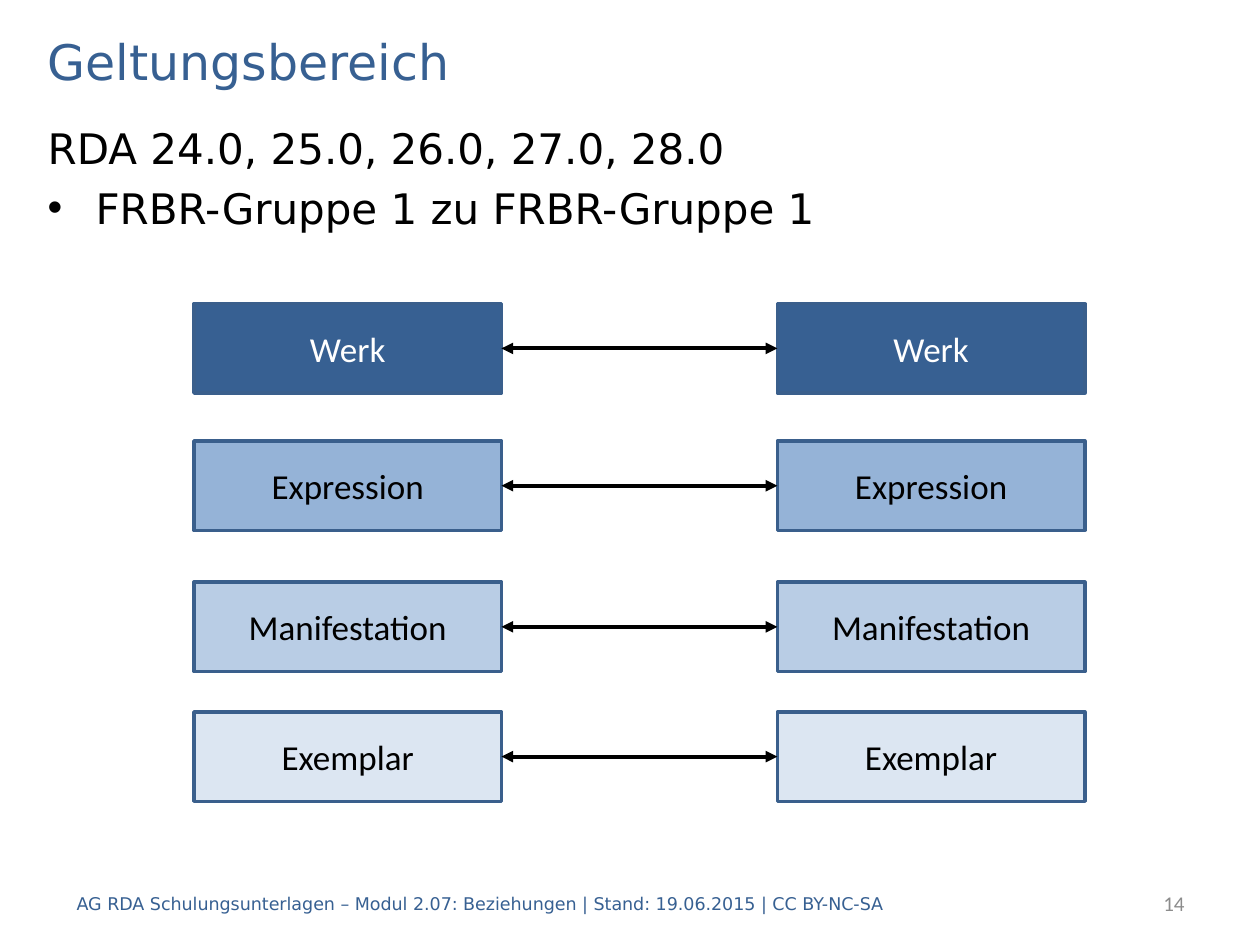
from lxml import etree
from pptx import Presentation
from pptx.dml.color import RGBColor
from pptx.enum.shapes import MSO_CONNECTOR, MSO_SHAPE
from pptx.enum.text import MSO_ANCHOR, PP_ALIGN
from pptx.oxml.ns import qn
from pptx.util import Inches, Pt

RECT, LINE = MSO_SHAPE.RECTANGLE, MSO_CONNECTOR.STRAIGHT
TOP, MIDDLE = MSO_ANCHOR.TOP, MSO_ANCHOR.MIDDLE
LEFT, CENTER, RIGHT = PP_ALIGN.LEFT, PP_ALIGN.CENTER, PP_ALIGN.RIGHT

BLUE = RGBColor(0x37, 0x60, 0x92)
EDGE = RGBColor(0x3A, 0x5F, 0x8C)
MID = RGBColor(0x95, 0xB3, 0xD7)
LIGHT = RGBColor(0xB9, 0xCD, 0xE5)
PALE = RGBColor(0xDC, 0xE6, 0xF2)
GRAY = RGBColor(0x8C, 0x8C, 0x8C)
BLACK = RGBColor(0, 0, 0)
WHITE = RGBColor(255, 255, 255)
SANS, BODY = "DejaVu Sans", "Calibri"

# Content
TITLE = "Geltungsbereich"
INTRO = ["RDA 24.0, 25.0, 26.0, 27.0, 28.0", "FRBR-Gruppe 1 zu FRBR-Gruppe 1"]
FOOTER = ("AG RDA Schulungsunterlagen – Modul 2.07: Beziehungen"
          " | Stand: 19.06.2015 | CC BY-NC-SA")
NUMBER = "14"
LEVELS = [  # name, top, fill, text colour
    ("Werk", 2.41, BLUE, WHITE),
    ("Expression", 3.5, MID, BLACK),
    ("Manifestation", 4.62, LIGHT, BLACK),
    ("Exemplar", 5.65, PALE, BLACK),
]
COLS = (1.54, 6.17)
BOX_W, BOX_H = 2.44, 0.71


def write(shape, lines, size, font, color, align=LEFT, anchor=MIDDLE):
    frame = shape.text_frame
    frame.word_wrap = True
    frame.vertical_anchor = anchor
    frame.text = "\n".join(lines)
    for par in frame.paragraphs:
        par.alignment = align
        par.font.size = Pt(size)
        par.font.name = font
        par.font.color.rgb = color
    return frame


def label(slide, area, *style, **place):
    box = slide.shapes.add_textbox(*map(Inches, area))
    return write(box, *style, **place)


def add_box(slide, left, level):
    name, top, fill, color = level
    box = slide.shapes.add_shape(
        RECT, *map(Inches, (left, top, BOX_W, BOX_H)))
    box.shadow.inherit = False
    box.fill.solid()
    box.fill.fore_color.rgb = fill
    box.line.color.rgb = EDGE
    box.line.width = Pt(2)
    write(box, [name], 20, BODY, color, CENTER)
    return box


def link(slide, start, end):
    arrow = slide.shapes.add_connector(LINE, 0, 0, 0, 0)
    arrow.begin_connect(start, 3)
    arrow.end_connect(end, 1)
    arrow.line.color.rgb = BLACK
    arrow.line.width = Pt(2.25)
    props = arrow._element.spPr
    for tag in ("a:headEnd", "a:tailEnd"):
        etree.SubElement(props.find(qn("a:ln")), qn(tag), type="triangle")
    etree.SubElement(props, qn("a:effectLst"))


def main():
    deck = Presentation()
    deck.slide_width, deck.slide_height = Inches(10), Inches(7.5)
    slide = deck.slides.add_slide(deck.slide_layouts[5])

    # Title
    title = slide.shapes.title
    title.left, title.top, title.width, title.height = map(
        Inches, (0.28, 0.2, 9.45, 0.56))
    write(title, [TITLE], 28, SANS, BLUE)

    # Intro with a bullet on its second line
    intro = label(slide, (0.28, 0.92, 9.45, 1.2), INTRO, 24, SANS, BLACK,
                  anchor=TOP)
    point = intro.paragraphs[1]
    point.space_before = Pt(5.6)
    props = point._p.get_or_add_pPr()
    props.set("marL", str(Inches(0.38)))
    props.set("indent", str(-Inches(0.38)))
    etree.SubElement(props, qn("a:buFont"), typeface="Arial")
    etree.SubElement(props, qn("a:buChar"), char="•")
    props.append(props.find(qn("a:defRPr")))  # schema order: bullet first

    # Footer and slide number
    label(slide, (0.51, 6.97, 8.43, 0.4), [FOOTER], 10, SANS, BLUE)
    label(slide, (7.91, 6.97, 1.59, 0.4), [NUMBER], 12, BODY, GRAY, RIGHT)

    # Paired levels, joined by double arrows
    for level in LEVELS:
        start, end = [add_box(slide, left, level) for left in COLS]
        link(slide, start, end)

    deck.save("out.pptx")


if __name__ == "__main__":
    main()
